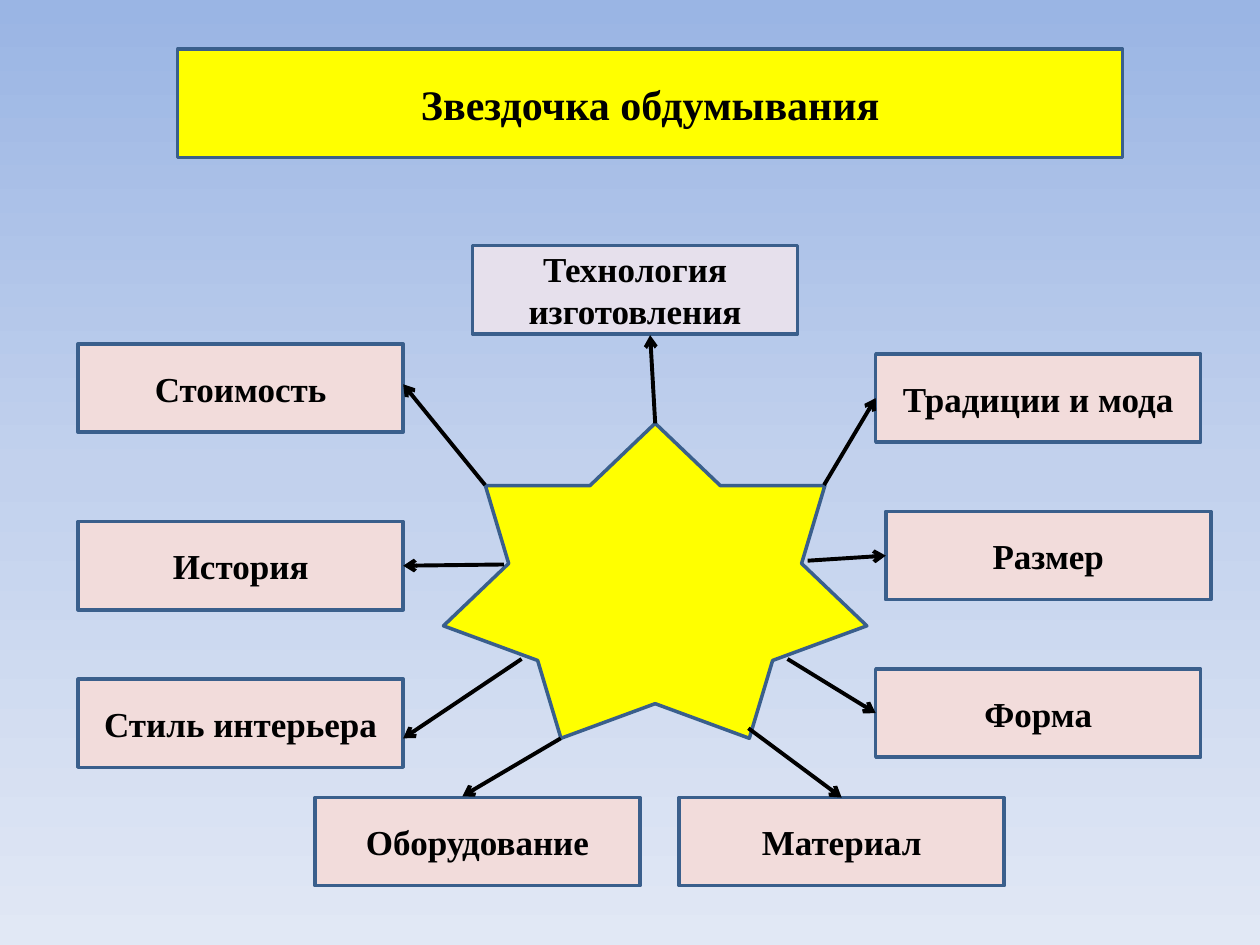
from copy import deepcopy

from pptx import Presentation
from pptx.dml.color import RGBColor
from pptx.enum.shapes import MSO_CONNECTOR as Connector, MSO_SHAPE as Shape
from pptx.enum.text import MSO_ANCHOR as Anchor, PP_ALIGN as Align
from pptx.oxml.ns import qn
from pptx.oxml.xmlchemy import OxmlElement
from pptx.util import Inches, Pt

BLACK = RGBColor(0x00, 0x00, 0x00)
YELLOW = RGBColor(0xFF, 0xFF, 0x00)
BORDER = RGBColor(0x3A, 0x5F, 0x8C)
LILAC = RGBColor(0xE6, 0xE0, 0xEC)
PINK = RGBColor(0xF2, 0xDC, 0xDB)
SKY = (
    (0, RGBColor(0x9A, 0xB5, 0xE4)),
    (0.5, RGBColor(0xC2, 0xD1, 0xED)),
    (1, RGBColor(0xE1, 0xE8, 0xF5)),
)

TITLE_BOX = (1.41, 0.39, 7.5, 0.86)
DIAGRAM_BOX = (0.62, 1.95, 8.99, 5.08)
STAR = (2.9, 1.41, 3.36, 2.5)
TOPIC_SIZE = (2.58, 0.7)
TOPICS = (
    ("Технология изготовления", LILAC, (3.13, 0), (4.58, 1.41), (4.54, 0.71)),
    ("Традиции и мода", PINK, (6.33, 0.86), (5.92, 1.9), (6.33, 1.21)),
    ("Размер", PINK, (6.41, 2.11), (5.79, 2.5), (6.41, 2.46)),
    ("Форма", PINK, (6.33, 3.36), (5.63, 3.28), (6.33, 3.71)),
    ("Материал", PINK, (4.77, 4.38), (5.32, 3.83), (6.06, 4.38)),
    ("Оборудование", PINK, (1.88, 4.38), (3.83, 3.91), (3.05, 4.37)),
    ("Стиль интерьера", PINK, (0, 3.44), (3.52, 3.28), (2.58, 3.91)),
    ("История", PINK, (0, 2.19), (3.38, 2.53), (2.58, 2.54)),
    ("Стоимость", PINK, (0, 0.78), (3.23, 1.9), (2.58, 1.1)),
)


def paint_background(slide):
    """Fill the slide with a gradient that lightens downwards."""
    fill = slide.background.fill
    fill.gradient()
    fill.gradient_angle = 270
    first_stop = slide.element.find(".//" + qn("a:gs"))
    first_stop.addnext(deepcopy(first_stop))
    for stop, (position, color) in zip(fill.gradient_stops, SKY):
        stop.position = position
        stop.color.rgb = color


def style_shape(shape, color):
    """Give a shape its fill and the common border."""
    shape.fill.solid()
    shape.fill.fore_color.rgb = color
    shape.line.color.rgb = BORDER
    shape.line.width = Pt(2)


def write_label(shape, text, size):
    """Write centred bold text in a shape."""
    frame = shape.text_frame
    frame.word_wrap = True
    frame.vertical_anchor = Anchor.MIDDLE
    paragraph = frame.paragraphs[0]
    paragraph.alignment = Align.CENTER
    run = paragraph.add_run()
    run.text = text
    font_format = {"name": "Times New Roman", "size": Pt(size), "bold": True}
    for attribute, value in font_format.items():
        setattr(run.font, attribute, value)
    run.font.color.rgb = BLACK


def place_title(slide, box):
    """Move and format the title placeholder."""
    title = slide.shapes.title
    for attribute, value in zip(("left", "top", "width", "height"), box):
        setattr(title, attribute, Inches(value))
    style_shape(title, YELLOW)
    write_label(title, "Звездочка обдумывания", 24)


def add_block(slide, preset, box, color):
    """Add a flat preset shape in the given box."""
    shape = slide.shapes.add_shape(preset, *map(Inches, box))
    shape.shadow.inherit = False
    style_shape(shape, color)
    return shape


def add_arrow(slide, start, end):
    """Draw a black arrow between two points."""
    arrow = slide.shapes.add_connector(
        Connector.STRAIGHT, *map(Inches, (*start, *end))
    )
    arrow.line.color.rgb = BLACK
    arrow.line.width = Pt(2.25)
    tail = OxmlElement("a:tailEnd")
    tail.set("type", "arrow")
    arrow.line._get_or_add_ln().append(tail)
    arrow._element.spPr.append(OxmlElement("a:effectLst"))


def place_diagram(slide, box):
    """Place the star, its topics and the arrows inside a box."""
    left, top = box[:2]

    def shift(point):
        """Move a point from the box to the slide."""
        return left + point[0], top + point[1]

    add_block(slide, Shape.STAR_7_POINT, (*shift(STAR), *STAR[2:]), YELLOW)
    for text, color, corner, _, _ in TOPICS:
        topic_box = (*shift(corner), *TOPIC_SIZE)
        topic = add_block(slide, Shape.RECTANGLE, topic_box, color)
        write_label(topic, text, 20)
    for _, _, _, start, end in TOPICS:
        add_arrow(slide, shift(start), shift(end))


def main():
    """Build the slide and save it."""
    presentation = Presentation()
    presentation.slide_width = Inches(10)
    presentation.slide_height = Inches(7.5)
    slide = presentation.slides.add_slide(presentation.slide_layouts[5])
    paint_background(slide)
    place_title(slide, TITLE_BOX)
    place_diagram(slide, DIAGRAM_BOX)
    presentation.save("out.pptx")


if __name__ == "__main__":
    main()
